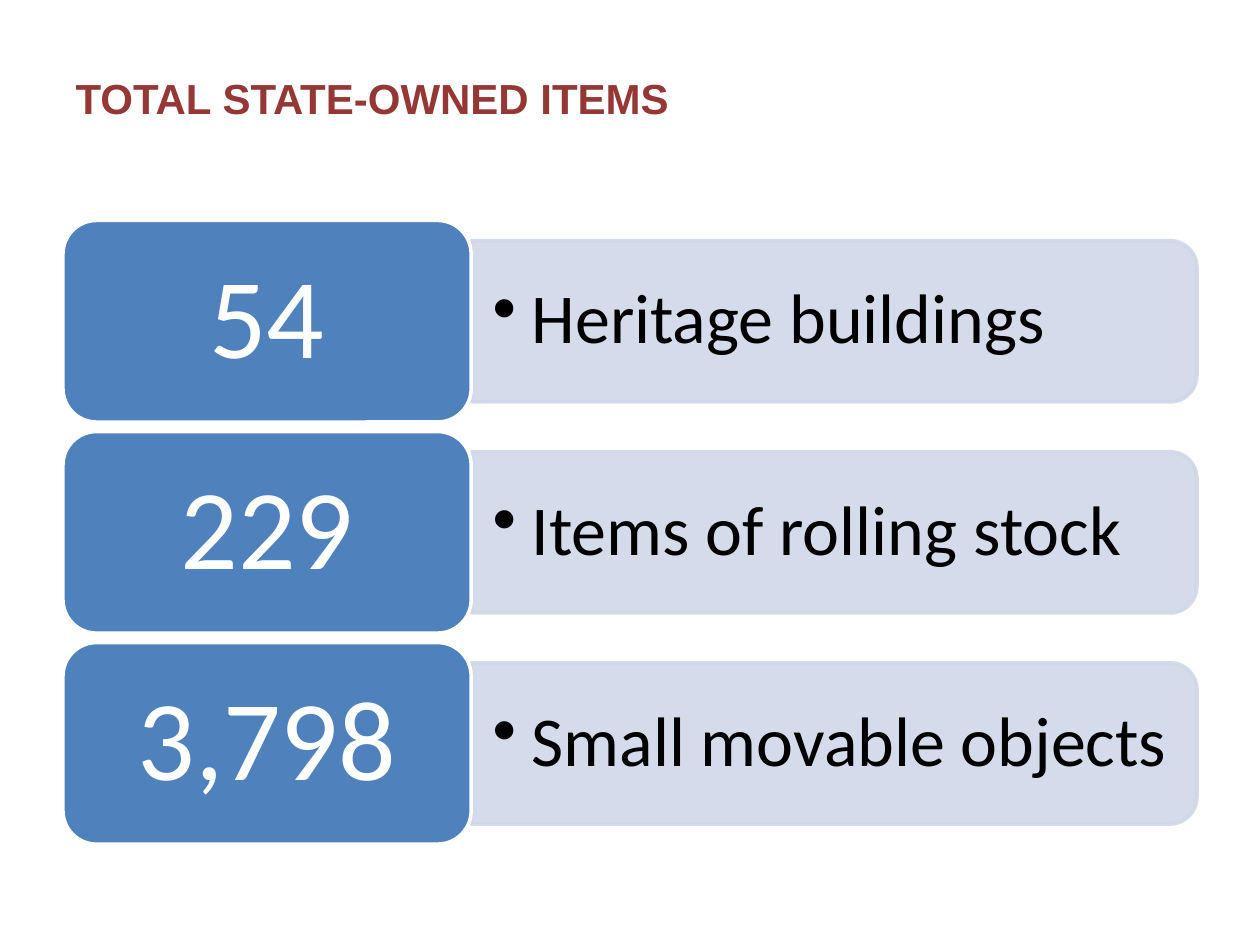
import pptx
import pptx.util
import pptx.dml.color
import pptx.enum.shapes
import pptx.enum.text
import pptx.oxml
import pptx.oxml.ns

Inches = pptx.util.Inches
Pt = pptx.util.Pt
RGBColor = pptx.dml.color.RGBColor
Shapes = pptx.enum.shapes.MSO_SHAPE
Align = pptx.enum.text.PP_ALIGN
Anchor = pptx.enum.text.MSO_ANCHOR

RED = RGBColor(0x95, 0x37, 0x35)
BLUE = RGBColor(0x4F, 0x81, 0xBD)
PALE = RGBColor(0xD0, 0xD8, 0xE8)
WHITE = RGBColor(0xFF, 0xFF, 0xFF)
BLACK = RGBColor(0, 0, 0)

LEFT, WIDTH = 0.5, 9
FIRST_ROW, LAST_ROW = 1.75, 5.1
CARD_WIDTH, CARD_HEIGHT = WIDTH * 0.36, 1.6
PANEL_LEFT, PANEL_WIDTH = LEFT + CARD_WIDTH, WIDTH * 0.64
PANEL_HEIGHT = CARD_HEIGHT * 0.8
LABEL_WIDTH, LABEL_HEIGHT = 5.7, 1.15
BULLET_INDENT = Inches(0.31)

ITEMS = [
    ("54", "Heritage buildings"),
    ("229", "Items of rolling stock"),
    ("3,798", "Small movable objects"),
]


def add_run(paragraph, text, size, font, color, bold=False):
    run = paragraph.add_run()
    run.text = text
    run.font.size = Pt(size)
    run.font.name = font
    run.font.bold = bold
    run.font.color.rgb = color


def set_frame(shape, side, edge):
    frame = shape.text_frame
    frame.word_wrap = True
    frame.vertical_anchor = Anchor.MIDDLE
    frame.margin_left = frame.margin_right = Inches(side)
    frame.margin_top = frame.margin_bottom = Inches(edge)
    paragraph = frame.paragraphs[0]
    paragraph.line_spacing = 0.9
    return paragraph


def set_title(slide, text):
    title = slide.shapes.title
    title.left, title.top = Inches(LEFT), Inches(0.3)
    title.width, title.height = Inches(WIDTH), Inches(0.95)
    title.text_frame.vertical_anchor = Anchor.MIDDLE
    paragraph = title.text_frame.paragraphs[0]
    paragraph.alignment = Align.LEFT
    add_run(paragraph, text, 24, "Arial", RED, True)


def add_block(slide, preset, center_x, center_y, width, height, fill, line):
    shape = slide.shapes.add_shape(
        preset, Inches(center_x - width / 2), Inches(center_y - height / 2),
        Inches(width), Inches(height))
    shape.shadow.inherit = False
    shape.fill.solid()
    shape.fill.fore_color.rgb = fill
    shape.line.color.rgb = line
    shape.line.width = Pt(2)
    return shape


def add_panel(slide, middle):
    panel = add_block(slide, Shapes.ROUND_2_SAME_RECTANGLE,
                      PANEL_LEFT + PANEL_WIDTH / 2, middle,
                      PANEL_HEIGHT, PANEL_WIDTH, PALE, PALE)
    panel.rotation = 90
    for color in panel._element.spPr.iter(pptx.oxml.ns.qn("a:srgbClr")):
        pptx.oxml.ns.qn("a:alpha")
        alpha = color.makeelement(pptx.oxml.ns.qn("a:alpha"), {"val": "90000"})
        color.append(alpha)


def add_label(slide, text, middle):
    label = slide.shapes.add_textbox(
        Inches(PANEL_LEFT), Inches(middle - LABEL_HEIGHT / 2),
        Inches(LABEL_WIDTH), Inches(LABEL_HEIGHT))
    paragraph = set_frame(label, 0.17, 0.08)
    properties = paragraph._p.get_or_add_pPr()
    properties.set("marL", str(BULLET_INDENT))
    properties.set("indent", str(-BULLET_INDENT))
    bullet = properties.makeelement(pptx.oxml.ns.qn("a:buChar"), {"char": "•"})
    properties.append(bullet)
    add_run(paragraph, text, 40, "Calibri", BLACK)


def add_card(slide, number, middle):
    card = add_block(slide, Shapes.ROUNDED_RECTANGLE, LEFT + CARD_WIDTH / 2,
                     middle, CARD_WIDTH, CARD_HEIGHT, BLUE, WHITE)
    paragraph = set_frame(card, 0.27, 0.14)
    paragraph.alignment = Align.CENTER
    add_run(paragraph, number, 65, "Calibri", WHITE)


def main():
    presentation = pptx.Presentation()
    presentation.slide_width = Inches(10)
    presentation.slide_height = Inches(7.5)
    slide = presentation.slides.add_slide(presentation.slide_layouts[5])
    set_title(slide, "TOTAL STATE-OWNED ITEMS")
    pitch = (LAST_ROW - FIRST_ROW) / (len(ITEMS) - 1)
    for row, (number, text) in enumerate(ITEMS):
        middle = FIRST_ROW + row * pitch + CARD_HEIGHT / 2
        add_panel(slide, middle)
        add_label(slide, text, middle)
        add_card(slide, number, middle)
    presentation.save("out.pptx")


if __name__ == "__main__":
    main()
